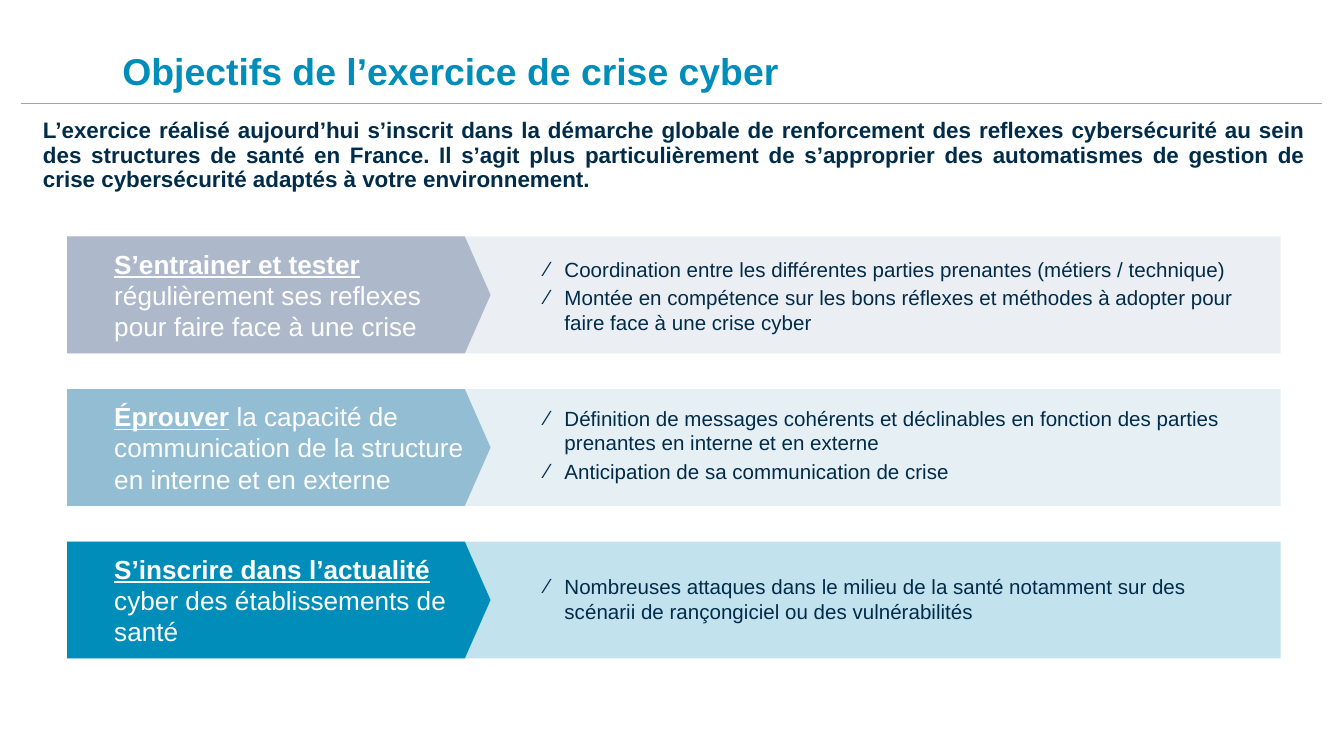
from lxml import etree
from pptx import Presentation
from pptx import util as u
from pptx.dml.color import RGBColor
from pptx.enum import shapes, text
from pptx.oxml import ns

NAVY, BLUE, WHITE, GREY = "002B49", "008DBA", "FFFFFF", "A6A6A6"
ROW_LEFT, ROW_TOP, ROW_HEIGHT, LAST_ROW_TOP = 0.5, 1.76, 0.87, 4.03
BAND_WIDTH, ARROW_WIDTH = 9.03, 3.15

ROWS = [
    ("ADB9CA", 0.69,
     [[("S’entrainer et tester ", True),
       ("régulièrement ses reflexes pour faire face à une crise", False)]],
     ["Coordination entre les différentes parties prenantes (métiers / technique)",
      "Montée en compétence sur les bons réflexes et méthodes à adopter pour "
      "faire face à une crise cyber"]),
    ("93BDD3", 0.74,
     [[("Éprouver", True),
       (" la capacité de communication de la structure en interne et en externe", False)]],
     ["Définition de messages cohérents et déclinables en fonction des parties "
      "prenantes en interne et en externe",
      "Anticipation de sa communication de crise"]),
    (BLUE, 0.51,
     [[("S’inscrire dans l’actualité", True)],
      [("cyber des établissements de santé", False)]],
     ["Nombreuses attaques dans le milieu de la santé notamment sur des "
      "scénarii de rançongiciel ou des vulnérabilités"]),
]
ROW_PITCH = (LAST_ROW_TOP - ROW_TOP) / (len(ROWS) - 1)


def color(value):
    return RGBColor.from_string(value)


class SlideBuilder:
    font_name = "Arial"

    def __init__(self, slide):
        self.slide = slide

    def style(self, run, size, fill, bold=False, underline=False):
        run.font.name = self.font_name
        run.font.size = u.Pt(size)
        run.font.color.rgb = color(fill)
        run.font.bold = bold
        run.font.underline = underline

    def frame(self, shape, anchor, margins=(0, 0, 0, 0)):
        frame = shape.text_frame
        frame.word_wrap = True
        frame.auto_size = text.MSO_AUTO_SIZE.NONE
        frame.vertical_anchor = anchor
        (frame.margin_left, frame.margin_top,
         frame.margin_right, frame.margin_bottom) = map(u.Inches, margins)
        return frame

    def title(self, left, top, width, height, wording):
        shape = self.slide.shapes.title
        shape.left, shape.top = u.Inches(left), u.Inches(top)
        shape.width, shape.height = u.Inches(width), u.Inches(height)
        frame = self.frame(shape, text.MSO_ANCHOR.BOTTOM)
        frame.text = wording
        paragraph = frame.paragraphs[0]
        paragraph.alignment = text.PP_ALIGN.LEFT
        paragraph.line_spacing = u.Pt(22)
        self.style(paragraph.runs[0], 20, BLUE, bold=True)

    def divider(self, left, right, top):
        line = self.slide.shapes.add_connector(
            shapes.MSO_CONNECTOR.STRAIGHT,
            u.Inches(left), u.Inches(top), u.Inches(right), u.Inches(top))
        line.line.color.rgb = color(GREY)
        line.line.width = u.Pt(0.25)
        etree.SubElement(line._element.spPr, ns.qn("a:effectLst"))

    def intro(self, left, top, width, height, wording):
        box = self.slide.shapes.add_textbox(*map(u.Inches, (left, top, width, height)))
        frame = self.frame(box, text.MSO_ANCHOR.TOP)
        frame.text = wording
        paragraph = frame.paragraphs[0]
        paragraph.alignment = text.PP_ALIGN.JUSTIFY
        paragraph.line_spacing = 0.9
        self.style(paragraph.runs[0], 12, NAVY, bold=True)

    def block(self, kind, left, top, width, height, fill, opacity=None):
        shape = self.slide.shapes.add_shape(
            kind, *map(u.Inches, (left, top, width, height)))
        shape.shadow.inherit = False
        shape.fill.solid()
        shape.fill.fore_color.rgb = color(fill)
        shape.line.fill.background()
        if opacity is not None:
            fill_color = shape._element.spPr.find(".//" + ns.qn("a:srgbClr"))
            etree.SubElement(fill_color, ns.qn("a:alpha"), val=str(opacity * 1000))
        return shape

    def arrow(self, left, top, width, height, fill, lines):
        shape = self.block(shapes.MSO_SHAPE.PENTAGON, left, top, width, height, fill)
        shape.adjustments[0] = 0.22
        frame = self.frame(shape, text.MSO_ANCHOR.MIDDLE, (0.35, 0, 0, 0))
        for index, parts in enumerate(lines):
            paragraph = frame.add_paragraph() if index else frame.paragraphs[0]
            paragraph.alignment = text.PP_ALIGN.LEFT
            for wording, strong in parts:
                run = paragraph.add_run()
                run.text = wording
                self.style(run, 14, WHITE, bold=strong, underline=strong)

    def bullets(self, left, top, width, height, items):
        box = self.slide.shapes.add_textbox(*map(u.Inches, (left, top, width, height)))
        frame = self.frame(box, text.MSO_ANCHOR.TOP, (0.09, 0.06, 0.09, 0.06))
        frame.text = "\n".join(items)
        for index, paragraph in enumerate(frame.paragraphs):
            properties = paragraph._p.get_or_add_pPr()
            properties.set("marL", str(u.Inches(0.14)))
            properties.set("indent", str(-u.Inches(0.14)))
            etree.SubElement(properties, ns.qn("a:buFont"), typeface=self.font_name)
            etree.SubElement(properties, ns.qn("a:buChar"), char="⁄")
            if index:
                paragraph.space_before = u.Pt(2)
            self.style(paragraph.runs[0], 11, NAVY)


def main():
    presentation = Presentation()
    presentation.slide_width = u.Inches(10)
    presentation.slide_height = u.Inches(10 * 9 / 16)
    builder = SlideBuilder(presentation.slides.add_slide(presentation.slide_layouts[5]))

    builder.divider(0.16, 9.84, 0.77)
    builder.title(0.91, 0.38, 8.21, 0.31, "Objectifs de l’exercice de crise cyber")
    builder.intro(
        0.32, 0.89, 9.4, 0.59,
        "L’exercice réalisé aujourd’hui s’inscrit dans la démarche globale de "
        "renforcement des reflexes cybersécurité au sein des structures de santé "
        "en France. Il s’agit plus particulièrement de s’approprier des automatismes "
        "de gestion de crise cybersécurité adaptés à votre environnement.")

    for index, (fill, bullets_height, lines, items) in enumerate(ROWS):
        top = ROW_TOP + index * ROW_PITCH
        bullets_top = top + (ROW_HEIGHT - bullets_height) / 2
        builder.block(shapes.MSO_SHAPE.RECTANGLE, ROW_LEFT, top,
                      BAND_WIDTH, ROW_HEIGHT, fill, opacity=24)
        builder.arrow(ROW_LEFT, top, ARROW_WIDTH, ROW_HEIGHT, fill, lines)
        builder.bullets(3.97, bullets_top, 5.44, bullets_height, items)

    presentation.save("out.pptx")


if __name__ == "__main__":
    main()
